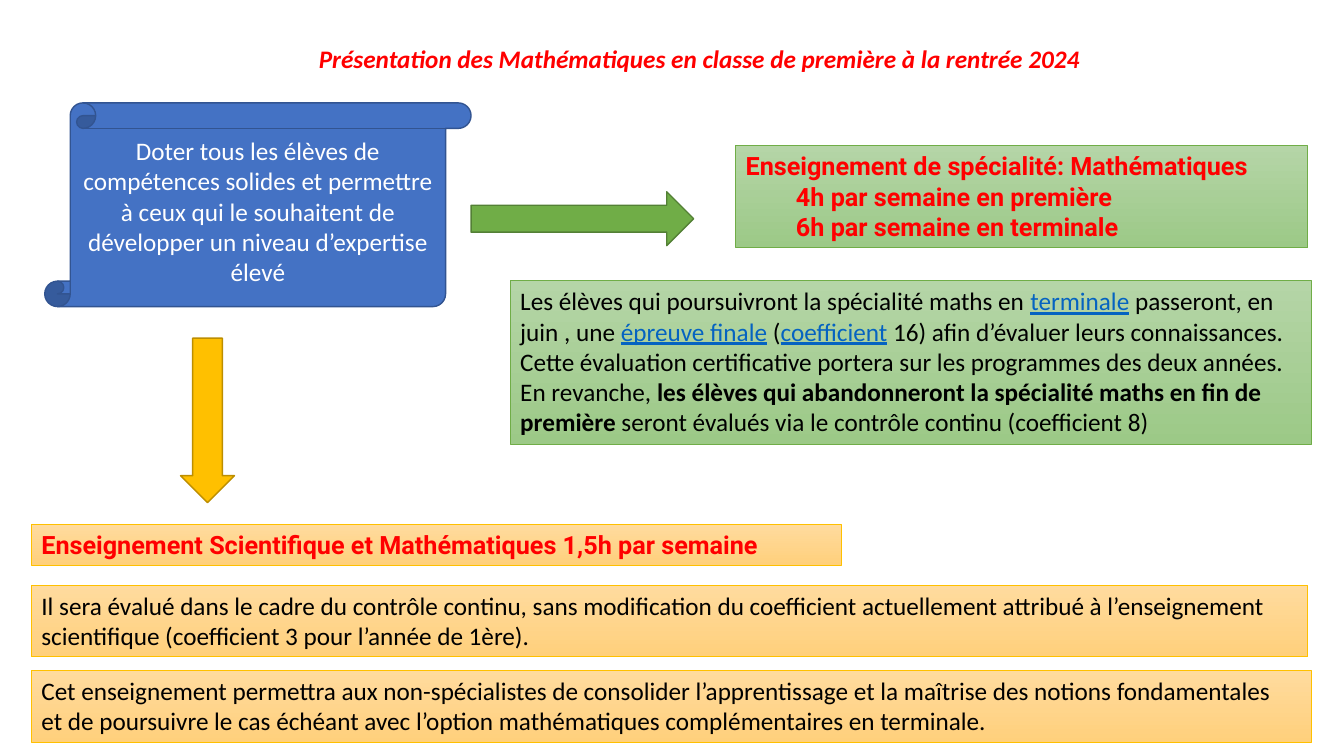
import pptx
import pptx.util
import pptx.dml.color
import pptx.enum.shapes
import pptx.enum.text

Pt = pptx.util.Pt
Kind = pptx.enum.shapes.MSO_SHAPE
Align = pptx.enum.text.PP_ALIGN
Anchor = pptx.enum.text.MSO_ANCHOR
RED, BLACK, BLUE = "FF0000", "000000", "0563C1"


def tint(hue):
    return pptx.dml.color.RGBColor.from_string(hue)


def write(shape, lines, face, hue, align=Align.LEFT, anchor=Anchor.TOP, wrap=True):
    frame = shape.text_frame
    frame.word_wrap = wrap
    frame.auto_size = pptx.enum.text.MSO_AUTO_SIZE.NONE
    frame.vertical_anchor = anchor
    for row, parts in enumerate(lines):
        para = frame.add_paragraph() if row else frame.paragraphs[0]
        para.alignment = align
        for text, style in parts:
            run = para.add_run()
            run.text = text
            run.font.name = face
            run.font.size = Pt(18)
            run.font.bold = "b" in style
            run.font.italic = "i" in style
            run.font.underline = "u" in style
            run.font.color.rgb = tint(BLUE if "u" in style else hue)


deck = pptx.Presentation()
deck.slide_width, deck.slide_height = Pt(960), Pt(540)
slide = deck.slides.add_slide(deck.slide_layouts[5])

title = slide.shapes.title
title.left, title.top, title.width, title.height = Pt(220.5), Pt(27.5), Pt(565), Pt(29)
heading = "Présentation des Mathématiques en classe de première à la rentrée 2024"
write(title, [[(heading, "bi")]], "Calibri", RED, wrap=False)

amber = ("FFDB9E", "FFD07C", "FFC000")
green = ("B5D5A7", "9CC987", "70AD47")
panels = [
    ((22.5, 374.5, 578.5, 29), amber, "Roboto", RED, [
        [("Enseignement Scientifique et Mathématiques 1,5h par semaine", "b")],
    ]),
    ((22.5, 479, 914.5, 51), amber, "Calibri", BLACK, [
        [("Cet enseignement permettra aux non-spécialistes de consolider l’apprentissage et la maîtrise des notions fondamentales", "")],
        [("et de poursuivre le cas échéant avec l’option mathématiques complémentaires en terminale.", "")],
    ]),
    ((22.5, 418, 911.5, 51), amber, "Calibri", BLACK, [
        [("Il sera évalué dans le cadre du contrôle continu, sans modification du coefficient actuellement attribué à l’enseignement", "")],
        [("scientifique (coefficient 3 pour l’année de 1ère).", "")],
    ]),
    ((525.5, 104, 408.5, 73), green, "Roboto", RED, [
        [("Enseignement de spécialité: Mathématiques", "b")],
        [("\t4h par semaine en première", "b")],
        [("\t6h par semaine en terminale", "b")],
    ]),
    ((364.5, 200.5, 572.5, 117), green, "Calibri", BLACK, [
        [("Les élèves qui poursuivront la spécialité maths en ", ""), ("terminale", "u"),
         (" passeront, en juin , une ", ""), ("épreuve finale", "u"), (" (", ""),
         ("coefficient", "u"), (" 16) afin d’évaluer leurs connaissances.", "")],
        [("Cette évaluation certificative portera sur les programmes des deux années.", "")],
        [("En revanche, ", ""),
         ("les élèves qui abandonneront la spécialité maths en fin de première", "b"),
         (" seront évalués via le contrôle continu (coefficient 8)", "")],
    ]),
]
for area, (light, dark, edge), face, hue, lines in panels:
    panel = slide.shapes.add_shape(Kind.RECTANGLE, *map(Pt, area))
    panel.shadow.inherit = False
    panel.fill.gradient()
    panel.fill.gradient_angle = 270
    for stop, shade in zip(panel.fill.gradient_stops, (light, dark)):
        stop.color.rgb = tint(shade)
    panel.line.color.rgb = tint(edge)
    panel.line.width = Pt(0.5)
    write(panel, lines, face, hue)

figures = [
    (Kind.VERTICAL_SCROLL, (32, 73.5, 304.5, 145.5), "4472C4", "325491"),
    (Kind.DOWN_ARROW, (129, 241.5, 38.5, 117.5), "FFC000", "BD8E00"),
    (Kind.RIGHT_ARROW, (336.5, 137, 159, 38.5), "70AD47", "538035"),
]
drawn = []
for kind, area, fill, edge in figures:
    figure = slide.shapes.add_shape(kind, *map(Pt, area))
    figure.shadow.inherit = False
    figure.fill.solid()
    figure.fill.fore_color.rgb = tint(fill)
    figure.line.color.rgb = tint(edge)
    figure.line.width = Pt(1)
    drawn.append(figure)

scroll, down, right = drawn
down.adjustments[0] = 0.55
goal = "Doter tous les élèves de compétences solides et permettre à ceux qui le souhaitent de développer un niveau d’expertise élevé"
write(scroll, [[(goal, "")]], "Calibri", "FFFFFF", Align.CENTER, Anchor.MIDDLE)

deck.save("out.pptx")
